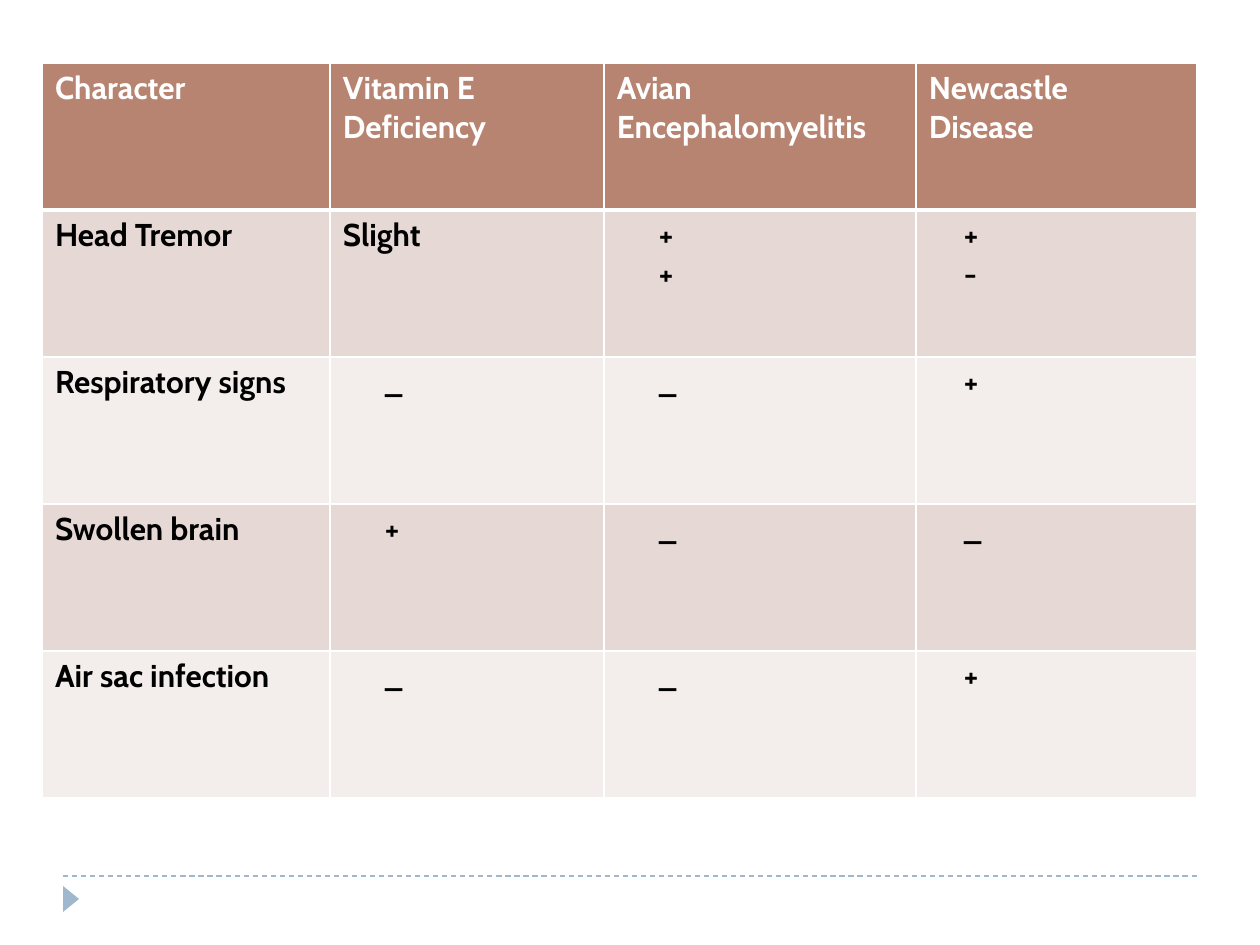
from typing import NamedTuple

from lxml.etree import SubElement
from pptx import Presentation
from pptx.dml.color import RGBColor
from pptx.enum.dml import MSO_LINE
from pptx.enum.shapes import MSO_CONNECTOR, MSO_SHAPE
from pptx.oxml.ns import qn
from pptx.util import Emu, Pt

EMU_PER_PX = 914400 / 126

WHITE = RGBColor(0xFF, 0xFF, 0xFF)
BLACK = RGBColor(0x00, 0x00, 0x00)
HEADER_FILL = RGBColor(0xB8, 0x84, 0x72)
DARK_BAND = RGBColor(0xE6, 0xD9, 0xD5)
LIGHT_BAND = RGBColor(0xF3, 0xED, 0xEB)
FOOTER_BLUE = RGBColor(0x9F, 0xB8, 0xCD)

FONT = "Cabin"
FONT_SIZE = Pt(18)
THIN, THICK = Pt(1), Pt(3)
CELL_MARGIN = 13
HEADER_RIGHT_MARGIN = 30
ROW_HEIGHT = 147
SIGNS = {"+", "-", "_"}


class Column(NamedTuple):
    heading: str
    width: int
    sign_indent: int


class Symptom(NamedTuple):
    name: str
    findings: tuple[str, ...]  # one per disease; each character of a sign is a paragraph


COLUMNS = [
    Column("Character", 288, 0),
    Column("Vitamin E Deficiency", 274, 42),
    Column("Avian Encephalomyelitis", 312, 42),
    Column("Newcastle Disease", 281, 35),
]
SYMPTOMS = [
    Symptom("Head Tremor", ("Slight", "++", "+-")),
    Symptom("Respiratory signs", ("_", "_", "+")),
    Symptom("Swollen brain", ("+", "_", "_")),
    Symptom("Air sac infection", ("_", "_", "+")),
]


def px(length: int) -> Emu:
    return Emu(round(length * EMU_PER_PX))


def set_borders(cell, top: int, bottom: int) -> None:
    properties = cell._tc.get_or_add_tcPr()
    for side, width in (("L", THIN), ("R", THIN), ("T", top), ("B", bottom)):
        border = SubElement(properties, qn(f"a:ln{side}"), w=str(int(width)))
        fill = SubElement(border, qn("a:solidFill"))
        SubElement(fill, qn("a:srgbClr"), val=str(WHITE))


def fill_cell(cell, text: str, row: int, column: Column) -> None:
    is_header = row == 0
    is_sign = set(text) <= SIGNS
    set_borders(cell, THICK if row == 1 else THIN, THICK if is_header else THIN)
    cell.fill.solid()
    band = DARK_BAND if row % 2 else LIGHT_BAND
    cell.fill.fore_color.rgb = HEADER_FILL if is_header else band
    cell.margin_left = px(CELL_MARGIN + (column.sign_indent if is_sign else 0))
    cell.margin_right = px(HEADER_RIGHT_MARGIN if is_header else CELL_MARGIN)

    frame = cell.text_frame
    for index, line in enumerate(text if is_sign else [text]):
        paragraph = frame.add_paragraph() if index else frame.paragraphs[0]
        run = paragraph.add_run()
        run.text = line
        run.font.name = FONT
        run.font.size = FONT_SIZE
        run.font.bold = True
        run.font.color.rgb = WHITE if is_header else BLACK


def add_symptom_table(slide) -> None:
    rows = [[column.heading for column in COLUMNS]]
    rows += [[symptom.name, *symptom.findings] for symptom in SYMPTOMS]
    width = sum(column.width for column in COLUMNS)
    table = slide.shapes.add_table(
        len(rows), len(COLUMNS), px(42), px(63), px(width), px(ROW_HEIGHT * len(rows))
    ).table
    for index, column in enumerate(COLUMNS):
        table.columns[index].width = px(column.width)
    for row, texts in enumerate(rows):
        table.rows[row].height = px(ROW_HEIGHT)
        for index, (text, column) in enumerate(zip(texts, COLUMNS)):
            fill_cell(table.cell(row, index), text, row, column)


def add_footer(slide) -> None:
    rule = slide.shapes.add_connector(
        MSO_CONNECTOR.STRAIGHT, px(63), px(876), px(1197), px(876)
    )
    rule.line.color.rgb = FOOTER_BLUE
    rule.line.width = Pt(0.75)
    rule.line.dash_style = MSO_LINE.DASH
    SubElement(rule._element.spPr, qn("a:effectLst"))

    marker = slide.shapes.add_shape(
        MSO_SHAPE.ISOSCELES_TRIANGLE, px(58), px(891), px(26), px(16)
    )
    marker.rotation = 90
    marker.shadow.inherit = False
    marker.fill.solid()
    marker.fill.fore_color.rgb = FOOTER_BLUE
    marker.line.fill.background()


def main() -> None:
    presentation = Presentation()
    presentation.slide_width = px(1260)
    presentation.slide_height = px(945)
    blank_layout = presentation.slide_layouts[6]
    slide = presentation.slides.add_slide(blank_layout)
    add_footer(slide)
    add_symptom_table(slide)
    presentation.save("out.pptx")


if __name__ == "__main__":
    main()
